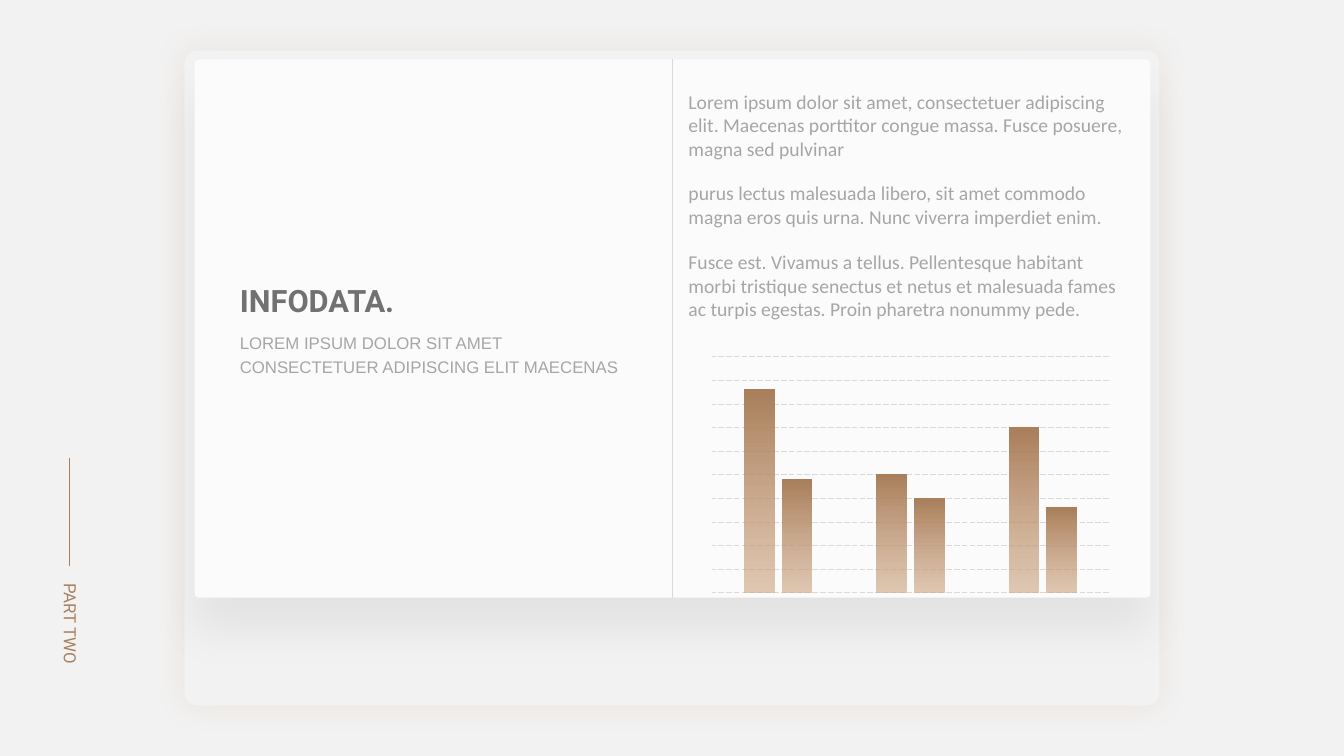
from lxml import etree
from pptx import Presentation
from pptx.chart.data import CategoryChartData
from pptx.dml.color import RGBColor
from pptx.enum.chart import XL_CHART_TYPE as CT
from pptx.enum.dml import MSO_LINE
from pptx.enum.shapes import MSO_CONNECTOR, MSO_SHAPE as SHAPE
from pptx.enum.text import MSO_ANCHOR, MSO_AUTO_SIZE as FIT, PP_ALIGN
from pptx.oxml import parse_xml
from pptx.oxml.ns import nsdecls, qn
from pptx.util import Inches, Pt

HEADING = "INFODATA."
SUBHEADING = "LOREM IPSUM DOLOR SIT AMET CONSECTETUER ADIPISCING ELIT MAECENAS"
SECTION = "PART TWO"
BODY = [
    (0.84, 0.81, "Lorem ipsum dolor sit amet, consectetuer adipiscing elit. "
                 "Maecenas porttitor congue massa. Fusce posuere, magna sed pulvinar"),
    (1.75, 0.57, "purus lectus malesuada libero, sit amet commodo magna eros quis urna. "
                 "Nunc viverra imperdiet enim."),
    (2.43, 0.81, "Fusce est. Vivamus a tellus. Pellentesque habitant morbi tristique senectus "
                 "et netus et malesuada fames ac turpis egestas. Proin pharetra nonummy pede."),
]
CATEGORIES = ["1", "2", "3"]
SERIES = {"Series 1": (4.3, 2.5, 3.5), "Series 2": (2.4, 2, 1.8)}
PANELS = [
    (SHAPE.RECTANGLE, (0, 0, 13.33, 7.5), "F2F2F2", None, None),
    (SHAPE.ROUNDED_RECTANGLE, (1.83, 0.5, 9.67, 6.5), "F2F2F2", 0.02, ("CDA582", 20, 20, 0, 0)),
    (SHAPE.ROUNDED_RECTANGLE, (1.93, 0.59, 9.48, 5.34), "FBFBFB", 0.009, ("000000", 6, 30, 25, 90)),
]
DARK, LIGHT, GRAY, RULE = "AA805C", "CDA582", "A6A6A6", "D9D9D9"


def rgb(value):
    return RGBColor.from_string(value)


def inches(box):
    return [Inches(v) for v in box]


def gradient(end_alpha=100):
    return parse_xml(
        f'<a:gradFill rotWithShape="1" {nsdecls("a")}><a:gsLst>'
        f'<a:gs pos="0"><a:srgbClr val="{DARK}"/></a:gs>'
        f'<a:gs pos="100000"><a:srgbClr val="{LIGHT}"><a:alpha val="{end_alpha * 1000}"/></a:srgbClr></a:gs>'
        '</a:gsLst><a:lin ang="5400000" scaled="0"/></a:gradFill>')


def use_gradient(parent, end_alpha=100):
    solid = parent.find(qn("a:solidFill"))
    parent.replace(solid, gradient(end_alpha))


def add_panel(s, kind, box, color, radius, shadow):
    sp = s.shapes.add_shape(kind, *inches(box))
    sp.shadow.inherit = False
    sp.fill.solid()
    sp.fill.fore_color.rgb = rgb(color)
    sp.line.fill.background()
    if radius:
        sp.adjustments[0] = radius
    if shadow:
        tint, alpha, blur, dist, angle = shadow
        effects = sp._element.spPr.find(qn("a:effectLst"))
        effects.append(parse_xml(
            f'<a:outerShdw {nsdecls("a")} blurRad="{Pt(blur)}" dist="{Pt(dist)}" '
            f'dir="{angle * 60000}" algn="ctr" rotWithShape="0">'
            f'<a:srgbClr val="{tint}"><a:alpha val="{alpha * 1000}"/></a:srgbClr></a:outerShdw>'))


def add_rule(s, x, top, bottom, color):
    line = s.shapes.add_connector(MSO_CONNECTOR.STRAIGHT, *inches((x, top, x, bottom)))
    line.line.color.rgb = rgb(color)
    line.line.width = Pt(0.5)
    etree.SubElement(line._element.spPr, qn("a:effectLst"))
    return line


def write(sp, text, size, font, color, bold=False, spacing=None):
    tf = sp.text_frame
    tf.word_wrap = True
    tf.auto_size = FIT.SHAPE_TO_FIT_TEXT
    tf.vertical_anchor = MSO_ANCHOR.TOP
    p = tf.paragraphs[0]
    p.alignment = PP_ALIGN.LEFT
    if spacing:
        p.line_spacing = spacing
    r = p.add_run()
    r.text = text
    r.font.size, r.font.name, r.font.bold = Pt(size), font, bold
    r.font.color.rgb = rgb(color)
    return r


def add_text(s, box, *style, **options):
    sp = s.shapes.add_textbox(*inches(box))
    return sp, write(sp, *style, **options)


def add_bars(s, box):
    data = CategoryChartData()
    data.categories = CATEGORIES
    for name, values in SERIES.items():
        data.add_series(name, values)
    chart = s.shapes.add_chart(CT.COLUMN_CLUSTERED, *inches(box), data).chart
    chart.has_legend = chart.has_title = False
    chart.font.size, chart.font.name = Pt(10), "Noto Sans CJK SC"
    chart.font.color.rgb = rgb("000000")
    chart.category_axis.visible = False
    axis = chart.value_axis
    axis.minimum_scale, axis.maximum_scale, axis.major_unit = 0, 5, 0.5
    axis.has_major_gridlines = True
    grid = axis.major_gridlines.format.line
    grid.color.rgb = rgb(RULE)
    grid.width, grid.dash_style = Pt(0.5), MSO_LINE.LONG_DASH
    axis.visible = False
    plot = chart.plots[0]
    plot.gap_width, plot.overlap, plot.vary_by_categories = 219, -27, False
    for series in plot.series:
        series.invert_if_negative = False
        series.format.fill.solid()
        series.format.fill.fore_color.rgb = rgb(DARK)
        use_gradient(series._element.spPr, 60)


def main():
    prs = Presentation()
    prs.slide_width, prs.slide_height = Inches(13.33), Inches(7.5)
    s = prs.slides.add_slide(prs.slide_layouts[5])
    title = s.shapes.title
    for panel in PANELS:
        add_panel(s, *panel)
    add_rule(s, 6.67, 0.59, 5.93, RULE)
    s.shapes._spTree.append(title._element)
    title.left, title.top, title.width, title.height = inches((2.28, 2.74, 2.01, 0.47))
    write(title, HEADING, 22, "Roboto", "717171", bold=True)
    add_text(s, (2.28, 3.21, 4.03, 0.56), SUBHEADING, 12, "Arial", GRAY, spacing=1.2)
    for top, height, text in BODY:
        add_text(s, (6.73, top, 4.61, height), text, 14, "Calibri", GRAY)
    add_bars(s, (6.98, 3.49, 4.1, 2.44))
    accent = add_rule(s, 0.69, 4.54, 5.62, LIGHT)
    use_gradient(accent._element.spPr.find(qn("a:ln")))
    label, r = add_text(s, (0.08, 6.16, 1.24, 0.3), SECTION, 12, "Roboto", DARK)
    label.rotation = 90
    use_gradient(r._r.rPr)
    prs.save("out.pptx")


if __name__ == "__main__":
    main()
